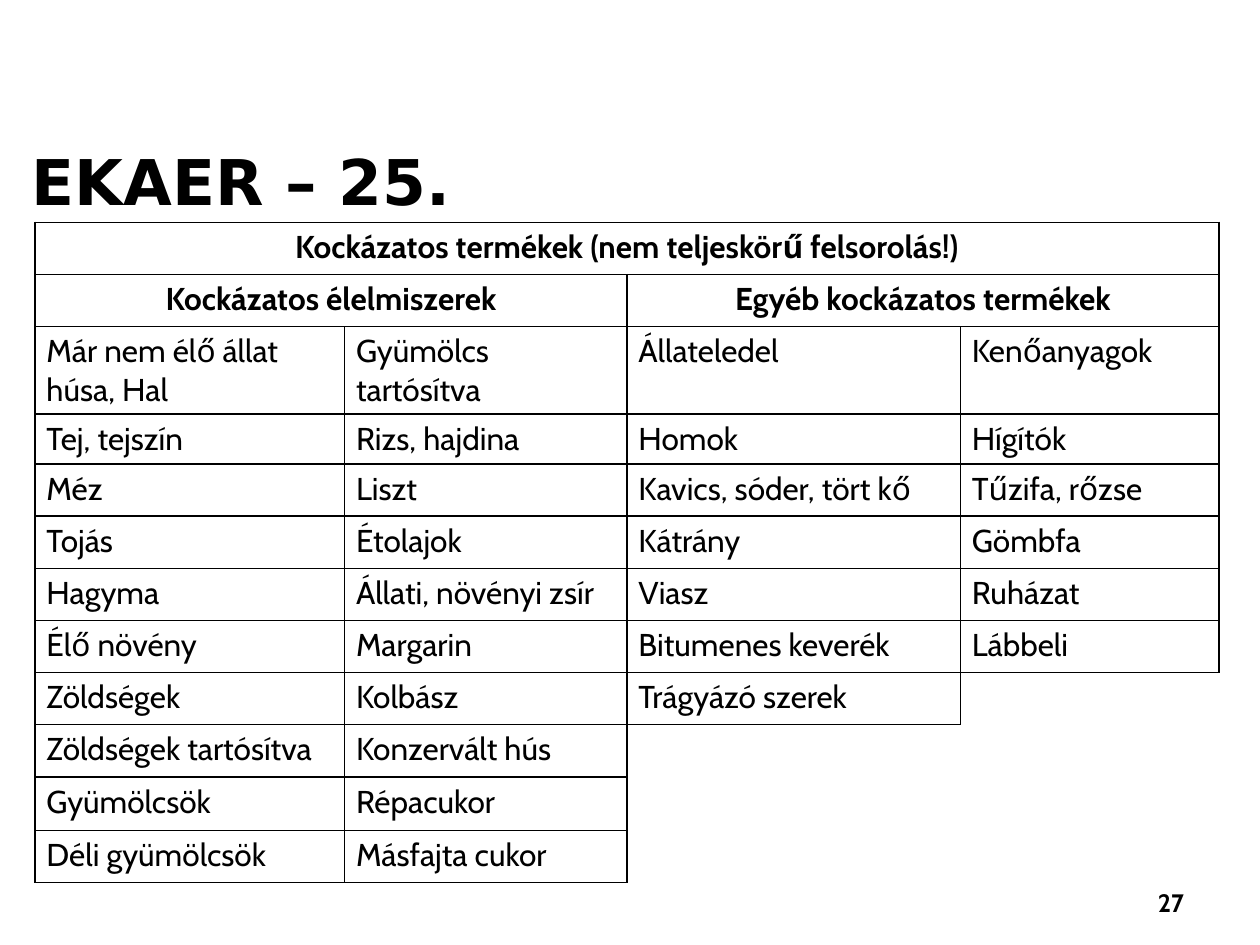
import pptx
import pptx.util
import pptx.dml.color
import pptx.enum.text
import pptx.oxml
import pptx.oxml.ns
from pptx.util import Inches

BLACK = pptx.dml.color.RGBColor(0, 0, 0)
WHITE = pptx.dml.color.RGBColor(255, 255, 255)
ALIGN = pptx.enum.text.PP_ALIGN

COLUMN_WIDTHS = [2.73, 2.49, 2.94, 2.28]
ROW_HEIGHTS = [0.46, 0.46, 0.77, 0.44] + [0.46] * 6 + [0.47, 0.46]
HEADING = "Kockázatos termékek (nem teljeskörű felsorolás!)"
GROUPS = ["Kockázatos élelmiszerek", "Egyéb kockázatos termékek"]
PRODUCTS = [
    ["Már nem élő állat húsa, Hal", "Gyümölcs tartósítva", "Állateledel", "Kenőanyagok"],
    ["Tej, tejszín", "Rizs, hajdina", "Homok", "Hígítók"],
    ["Méz", "Liszt", "Kavics, sóder, tört kő", "Tűzifa, rőzse"],
    ["Tojás", "Étolajok", "Kátrány", "Gömbfa"],
    ["Hagyma", "Állati, növényi zsír", "Viasz", "Ruházat"],
    ["Élő növény", "Margarin", "Bitumenes keverék", "Lábbeli"],
    ["Zöldségek", "Kolbász", "Trágyázó szerek", ""],
    ["Zöldségek tartósítva", "Konzervált hús", "", ""],
    ["Gyümölcsök", "Répacukor", "", ""],
    ["Déli gyümölcsök", "Másfajta cukor", "", ""],
]


def write_text(frame, text, size=20, font="Cabin", bold=False, align=ALIGN.LEFT):
    paragraph = frame.paragraphs[0]
    paragraph.alignment = align
    run = paragraph.add_run()
    run.text = text
    run.font.size = pptx.util.Pt(size)
    run.font.name = font
    run.font.bold = bold
    run.font.color.rgb = BLACK


def add_label(slide, text, left, top, width, height, side_inset, **text_format):
    label = slide.shapes.add_textbox(
        Inches(left), Inches(top), Inches(width), Inches(height))
    frame = label.text_frame
    frame.word_wrap = True
    frame.margin_left = frame.margin_right = Inches(side_inset)
    frame.margin_top = frame.margin_bottom = Inches(0.06)
    write_text(frame, text, **text_format)


def set_borders(cell, visible_sides):
    properties = cell._tc.get_or_add_tcPr()
    for side in "LRTB":
        if side in visible_sides:
            paint = f'<a:solidFill><a:srgbClr val="{BLACK}"/></a:solidFill>'
        else:
            paint = "<a:noFill/>"
        properties.append(pptx.oxml.parse_xml(
            f'<a:ln{side} {pptx.oxml.ns.nsdecls("a")} w="{pptx.util.Pt(1)}">'
            f"{paint}</a:ln{side}>"))


def visible_sides(row, column):
    first_product_row = len(ROW_HEIGHTS) - len(PRODUCTS)
    product_row = row - first_product_row
    if product_row < 0 or PRODUCTS[product_row][column]:
        return "LRTB"
    left = "L" if PRODUCTS[product_row][column - 1] else ""
    top = "T" if PRODUCTS[product_row - 1][column] else ""
    return left + top


def add_product_table(slide):
    table = slide.shapes.add_table(
        len(ROW_HEIGHTS), len(COLUMN_WIDTHS), Inches(0.31), Inches(1.96),
        Inches(sum(COLUMN_WIDTHS)), Inches(sum(ROW_HEIGHTS))).table
    table.first_row = table.horz_banding = False
    for column, width in zip(table.columns, COLUMN_WIDTHS):
        column.width = Inches(width)
    for row, height in zip(table.rows, ROW_HEIGHTS):
        row.height = Inches(height)

    for row in range(len(ROW_HEIGHTS)):
        for column in range(len(COLUMN_WIDTHS)):
            cell = table.cell(row, column)
            set_borders(cell, visible_sides(row, column))
            cell.fill.solid()
            cell.fill.fore_color.rgb = WHITE

    headers = [(0, 0, 3, HEADING), (1, 0, 1, GROUPS[0]), (1, 2, 3, GROUPS[1])]
    for row, first, last, header in headers:
        cell = table.cell(row, first)
        cell.merge(table.cell(row, last))
        write_text(cell.text_frame, header, bold=True, align=ALIGN.CENTER)

    for row, products in enumerate(PRODUCTS, start=2):
        for column, product in enumerate(products):
            if product:
                write_text(table.cell(row, column).text_frame, product)


def main():
    presentation = pptx.Presentation()
    presentation.slide_width = Inches(11.11)
    presentation.slide_height = Inches(8.33)
    slide = presentation.slides.add_slide(presentation.slide_layouts[6])
    add_label(slide, "27", 9.23, 7.76, 1.32, 0.58, 0.11,
              size=16, bold=True, align=ALIGN.RIGHT)
    add_label(slide, "EKAER – 25.", 0.22, 1.2, 10.59, 6.9, 0.06,
              size=40, font="DejaVu Sans", bold=True)
    add_product_table(slide)
    presentation.save("out.pptx")


if __name__ == "__main__":
    main()
